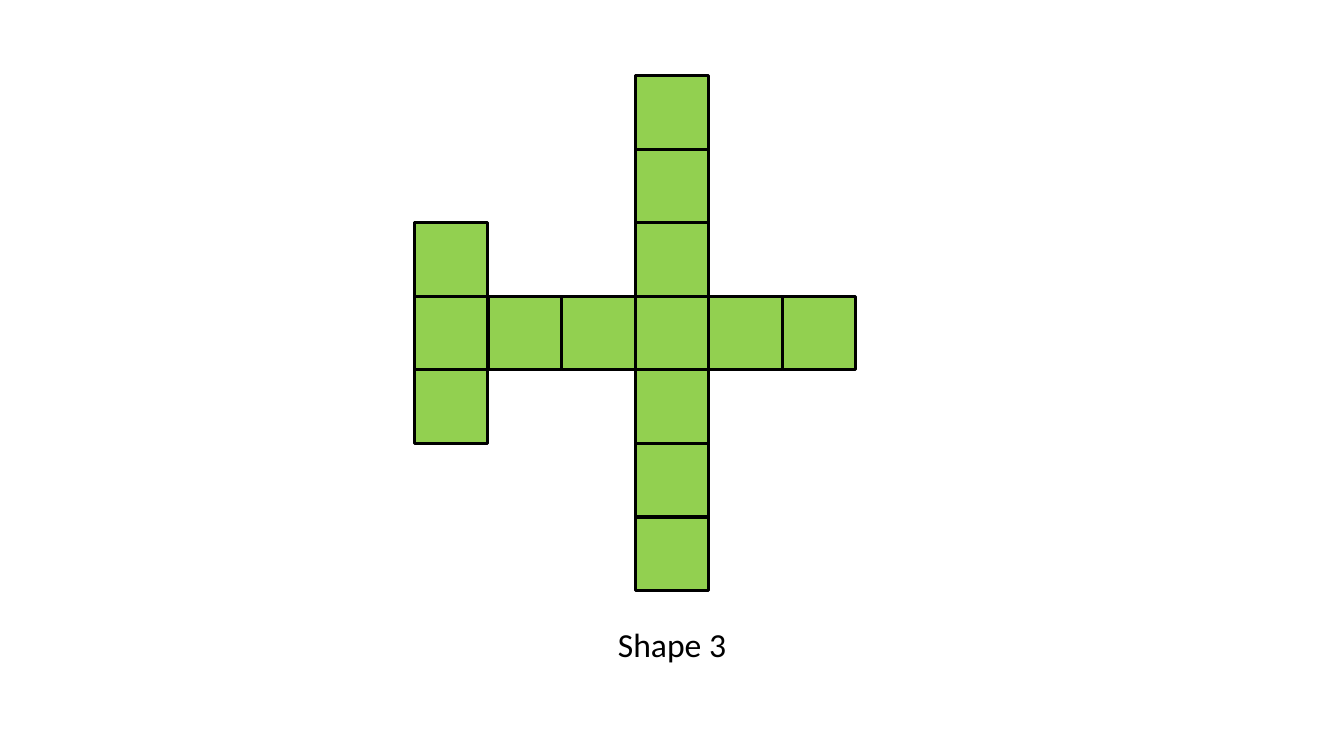
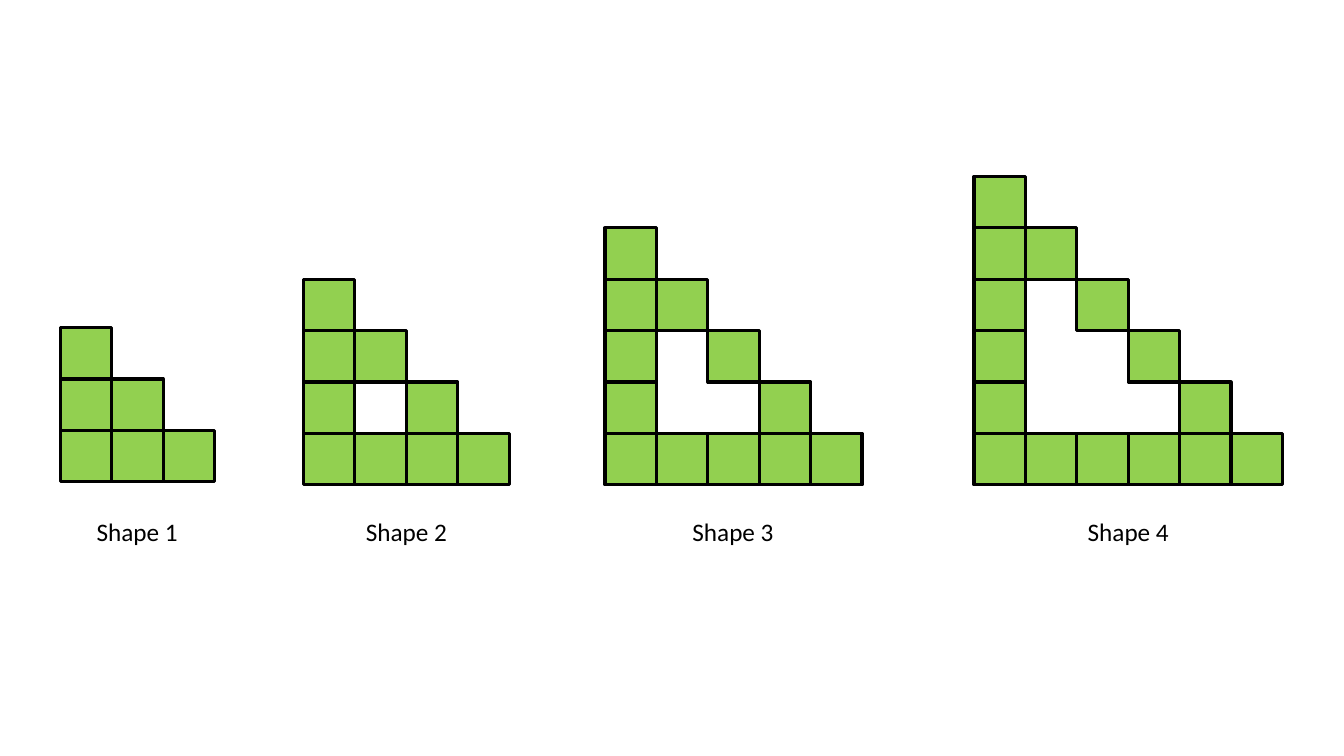
from pptx import Presentation
from pptx.dml.color import RGBColor
from pptx.enum.shapes import MSO_SHAPE
from pptx.enum.text import PP_ALIGN
from pptx.util import Pt

RECT = MSO_SHAPE.RECTANGLE
CENTER = PP_ALIGN.CENTER

PX = 9144
SLIDE_W, SLIDE_H = 1333, 750
FONT = "Calibri"
COLORS = {"tile": "92D050", "ink": "000000", "paper": "FFFFFF"}

CROSS = [
    "...#..",
    "...#..",
    "#..#..",
    "######",
    "#..#..",
    "...#..",
    "...#..",
]


def px(n):
    return int(n * PX)


def color(name):
    return RGBColor.from_string(COLORS[name])


def add_slide(prs):
    s = prs.slides.add_slide(prs.slide_layouts[6])
    s.background.fill.solid()
    s.background.fill.fore_color.rgb = color("paper")
    return s


def add_label(s, text, x, y, w, h, size):
    tf = s.shapes.add_textbox(px(x), px(y), px(w), px(h)).text_frame
    tf.word_wrap = True
    p = tf.paragraphs[0]
    p.alignment = CENTER
    r = p.add_run()
    r.text = text
    r.font.name = FONT
    r.font.size = Pt(size)
    r.font.color.rgb = color("ink")


def add_tiles(s, rows, x, y, side):
    group = s.shapes.add_group_shape()
    for i, row in enumerate(rows):
        for j, mark in enumerate(row):
            if mark != "#":
                continue
            sp = group.shapes.add_shape(
                RECT, px(x + j * side), px(y + i * side), px(side), px(side))
            sp.shadow.inherit = False
            sp.fill.solid()
            sp.fill.fore_color.rgb = color("tile")
            sp.line.color.rgb = color("ink")
            sp.line.width = Pt(2.25)


def triangle(n):
    return ["".join("#" if j in (0, i) or i == n - 1 else "."
                    for j in range(i + 1)) for i in range(n)]


def cross_slide(prs):
    s = add_slide(prs)
    add_label(s, "Shape 3", 502, 614, 329, 92, 24)
    add_tiles(s, CROSS, 411, 75, 73)


def triangles_slide(prs):
    s = add_slide(prs)
    side, label_w = 51, 152
    figures = [(60, 478), (301, 481), (600, 481), (966, 481)]
    for number, (x, bottom) in enumerate(figures, 1):
        n = number + 2
        width = n * side
        add_tiles(s, triangle(n), x, bottom - width, side)
        add_label(s, f"Shape {number}", x + (width - label_w) // 2, 507,
                  label_w, 40, 18)


def main():
    prs = Presentation()
    prs.slide_width, prs.slide_height = px(SLIDE_W), px(SLIDE_H)
    cross_slide(prs)
    triangles_slide(prs)
    prs.save("out.pptx")


if __name__ == "__main__":
    main()
